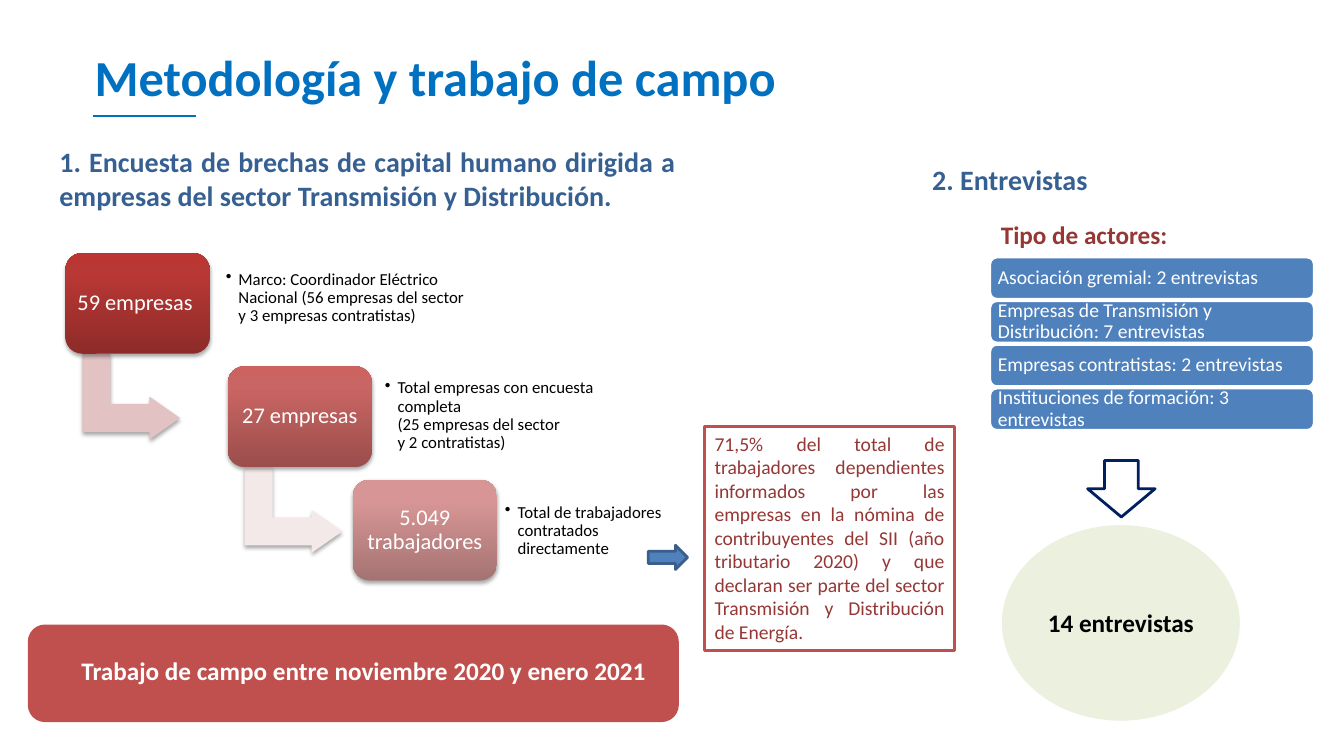
from copy import deepcopy
from dataclasses import dataclass
from typing import Optional

from lxml import etree
from pptx import Presentation
from pptx.dml.color import RGBColor
from pptx.enum import shapes, text
from pptx.oxml import ns
from pptx.util import Pt

FONT = "Calibri"
NBSP = chr(160)
WHITE = RGBColor(0xFF, 0xFF, 0xFF)
BLACK = RGBColor(0, 0, 0)
TITLE_BLUE = RGBColor(0x00, 0x70, 0xC0)
HEADING_BLUE = RGBColor(0x37, 0x60, 0x92)
ACTOR_BLUE = RGBColor(0x4F, 0x81, 0xBD)
ARROW_EDGE = RGBColor(0x3A, 0x5F, 0x8C)
NAVY = RGBColor(0x00, 0x20, 0x60)
DARK_RED = RGBColor(0x95, 0x37, 0x35)
RED = RGBColor(0xC0, 0x50, 0x4D)
PALE_GREEN = RGBColor(0xEB, 0xF1, 0xDE)

KIND = shapes.MSO_SHAPE
ALIGN = text.PP_ALIGN
MIDDLE = text.MSO_ANCHOR.MIDDLE


@dataclass(frozen=True)
class Area:
    left: float
    top: float
    width: float
    height: float

    def points(self) -> tuple:
        return Pt(self.left), Pt(self.top), Pt(self.width), Pt(self.height)


@dataclass(frozen=True)
class Step:
    left: float
    label: str
    shades: tuple  # bottom, upper and top colour of the gradient
    detail: str
    detail_area: Area
    arrow: Optional[RGBColor] = None


STEPS = (
    Step(46.8, "59 empresas" + NBSP, ("8E2B28", "B83835", "BB3632"),
         f"Marco: Coordinador Eléctrico Nacional{NBSP}(56 empresas del sector\n"
         "y 3 empresas contratistas)",
         Area(157.7, 183.6, 200.2, 58.3), RGBColor(0xE2, 0xC2, 0xC2)),
    Step(162.7, "27 empresas", ("9B4E4C", "C96563", "CC6361"),
         "Total empresas con encuesta completa\n(25 empresas del sector\ny 2 contratistas)",
         Area(271.4, 267.8, 174.2, 58.3), RGBColor(0xF4, 0xE9, 0xE9)),
    Step(252, "5.049 trabajadores", ("A57373", "D79695", "D99594"),
         "Total de trabajadores contratados directamente",
         Area(357.1, 349.9, 123.1, 58.3)),
)
STEPS_TOP, STEP_PITCH = 180.7, 81

ACTORS = (
    "Asociación gremial: 2 entrevistas",
    "Empresas de Transmisión y Distribución: 7 entrevistas",
    "Empresas contratistas: 2 entrevistas",
    "Instituciones de formación: 3 entrevistas",
)
ACTORS_TOP, ACTOR_PITCH = 183.6, 31.2

prs = Presentation()
prs.slide_width, prs.slide_height = Pt(960), Pt(540)
slide = prs.slides.add_slide(prs.slide_layouts[6])


def write(holder, words: str, *, size: float, color: RGBColor, bold: bool = False,
          align=ALIGN.LEFT, anchor=text.MSO_ANCHOR.TOP, wrap: bool = True,
          insets: tuple = (7.2, 3.6, 7.2, 3.6), spacing: float = 1,
          bullet: bool = False) -> None:
    frame = holder.text_frame
    frame.word_wrap, frame.vertical_anchor = wrap, anchor
    (frame.margin_left, frame.margin_top,
     frame.margin_right, frame.margin_bottom) = map(Pt, insets)
    paragraph = frame.paragraphs[0]
    paragraph.text = words
    paragraph.alignment, paragraph.line_spacing = align, spacing
    if bullet:
        properties = paragraph._p.get_or_add_pPr()
        properties.set("marL", str(Pt(9)))
        properties.set("indent", str(-Pt(9)))
        etree.SubElement(properties, ns.qn("a:buChar")).set("char", "•")
    for run in paragraph.runs:
        font = run.font
        font.name, font.size, font.bold = FONT, Pt(size), bold
        font.color.rgb = color
    # Line breaks take the size of the text around them
    for line_break in paragraph._p.findall(ns.qn("a:br")):
        line_break.insert(0, deepcopy(paragraph.runs[0]._r.rPr))


def add_text(area: Area, words: str, **style) -> None:
    write(slide.shapes.add_textbox(*area.points()), words, **style)


def add_figure(kind, area: Area, fill: Optional[RGBColor] = None,
               edge: Optional[RGBColor] = None):
    figure = slide.shapes.add_shape(kind, *area.points())
    figure.shadow.inherit = False
    if fill is None:
        figure.fill.background()
    else:
        figure.fill.solid()
        figure.fill.fore_color.rgb = fill
    if edge is None:
        figure.line.fill.background()
    else:
        figure.line.color.rgb = edge
        figure.line.width = Pt(2)
    return figure


def add_shadow(figure) -> None:
    effects = figure._element.spPr.find(ns.qn("a:effectLst"))
    shadow = etree.SubElement(effects, ns.qn("a:outerShdw"), blurRad=str(Pt(3.1)),
                              dist=str(Pt(1.8)), dir="5400000", rotWithShape="0")
    tint = etree.SubElement(shadow, ns.qn("a:srgbClr"), val="000000")
    etree.SubElement(tint, ns.qn("a:alpha"), val="35000")


def shade(figure, colors: tuple) -> None:
    figure.fill.gradient()
    figure.fill.gradient_angle = 90
    stop_list = figure._element.spPr.find(ns.qn("a:gradFill")).find(ns.qn("a:gsLst"))
    stop_list.append(deepcopy(stop_list[-1]))
    for stop, position, color in zip(figure.fill.gradient_stops, (0, 0.8, 1), colors):
        stop.position = position
        stop.color.rgb = RGBColor.from_string(color)


def add_step(step: Step, top: float) -> None:
    if step.arrow is not None:
        arrow = add_figure(KIND.BENT_UP_ARROW,
                           Area(step.left + 16.3, top + 67.7, 61.2, 69.8), step.arrow)
        arrow.rotation = 90
        for i, value in enumerate((0.328, 0.25, 0.358)):
            arrow.adjustments[i] = value
        add_shadow(arrow)
    box = add_figure(KIND.ROUNDED_RECTANGLE, Area(step.left, top, 103, 72))
    shade(box, step.shades)
    add_shadow(box)
    write(box, step.label, size=16, color=WHITE, align=ALIGN.CENTER, anchor=MIDDLE,
          insets=(5, 5, 5, 5), spacing=0.9)
    add_text(step.detail_area, step.detail, size=12, color=BLACK, anchor=MIDDLE,
             insets=(3.6, 3.6, 3.6, 3.6), spacing=0.9, bullet=True)


# Title and its underline
add_text(Area(60.5, 29.5, 507, 51), "Metodología y trabajo de campo",
         size=36, color=TITLE_BLUE, bold=True, wrap=False)
underline = slide.shapes.add_connector(shapes.MSO_CONNECTOR.STRAIGHT,
                                       Pt(66.2), Pt(82.8), Pt(139.7), Pt(82.8))
underline.line.color.rgb = TITLE_BLUE
underline.line.width = Pt(1.5)
etree.SubElement(underline._element.spPr, ns.qn("a:effectLst"))

# Section headings
heading = dict(size=20, color=HEADING_BLUE, bold=True, align=ALIGN.JUSTIFY)
add_text(Area(35.3, 100, 454.3, 85), "1. Encuesta de brechas de capital humano dirigida a "
         "empresas del sector Transmisión y Distribución.", **heading)
add_text(Area(658.8, 112.3, 280, 32), "2. Entrevistas", **heading)

# Survey steps
for i, step in enumerate(STEPS):
    add_step(step, STEPS_TOP + i * STEP_PITCH)

# Fieldwork banner
banner = add_figure(KIND.ROUNDED_RECTANGLE, Area(20.9, 447.1, 463, 67.7), RED, RED)
write(banner, "Trabajo de campo entre noviembre 2020 y enero 2021", size=18, color=WHITE,
      bold=True, anchor=MIDDLE, insets=(34, 0, 0, 4))

# Share of workers covered
coverage = add_figure(KIND.RECTANGLE, Area(503.3, 304.6, 178.6, 159.8), WHITE, RED)
write(coverage, "71,5% del total de trabajadores dependientes informados por las empresas "
      "en la nómina de contribuyentes del SII (año tributario 2020) y que declaran ser "
      "parte del sector Transmisión y Distribución de Energía.",
      size=14, color=DARK_RED, align=ALIGN.JUSTIFY)
add_figure(KIND.RIGHT_ARROW, Area(463, 389.5, 28.1, 17.3), ACTOR_BLUE, ARROW_EDGE)

# Interviews by type of actor
add_text(Area(707, 152.6, 238.3, 30.2), "Tipo de actores:", size=18, color=DARK_RED,
         bold=True, insets=(7.9, 4.3, 7.9, 4.3))
for i, actor in enumerate(ACTORS):
    bar = add_figure(KIND.ROUNDED_RECTANGLE,
                     Area(707, ACTORS_TOP + i * ACTOR_PITCH, 231.8, 30.2), ACTOR_BLUE, WHITE)
    write(bar, actor, size=14, color=WHITE, anchor=MIDDLE,
          insets=(4.3, 4.3, 4.3, 4.3), spacing=0.9)

# Interview total
add_figure(KIND.DOWN_ARROW, Area(776.9, 329, 48.2, 40.3), edge=NAVY)
total = add_figure(KIND.FLOWCHART_CONNECTOR, Area(715.7, 375.1, 169.9, 139.7), PALE_GREEN)
write(total, "14 entrevistas", size=18, color=BLACK, bold=True,
      align=ALIGN.CENTER, anchor=MIDDLE)

prs.save("out.pptx")
